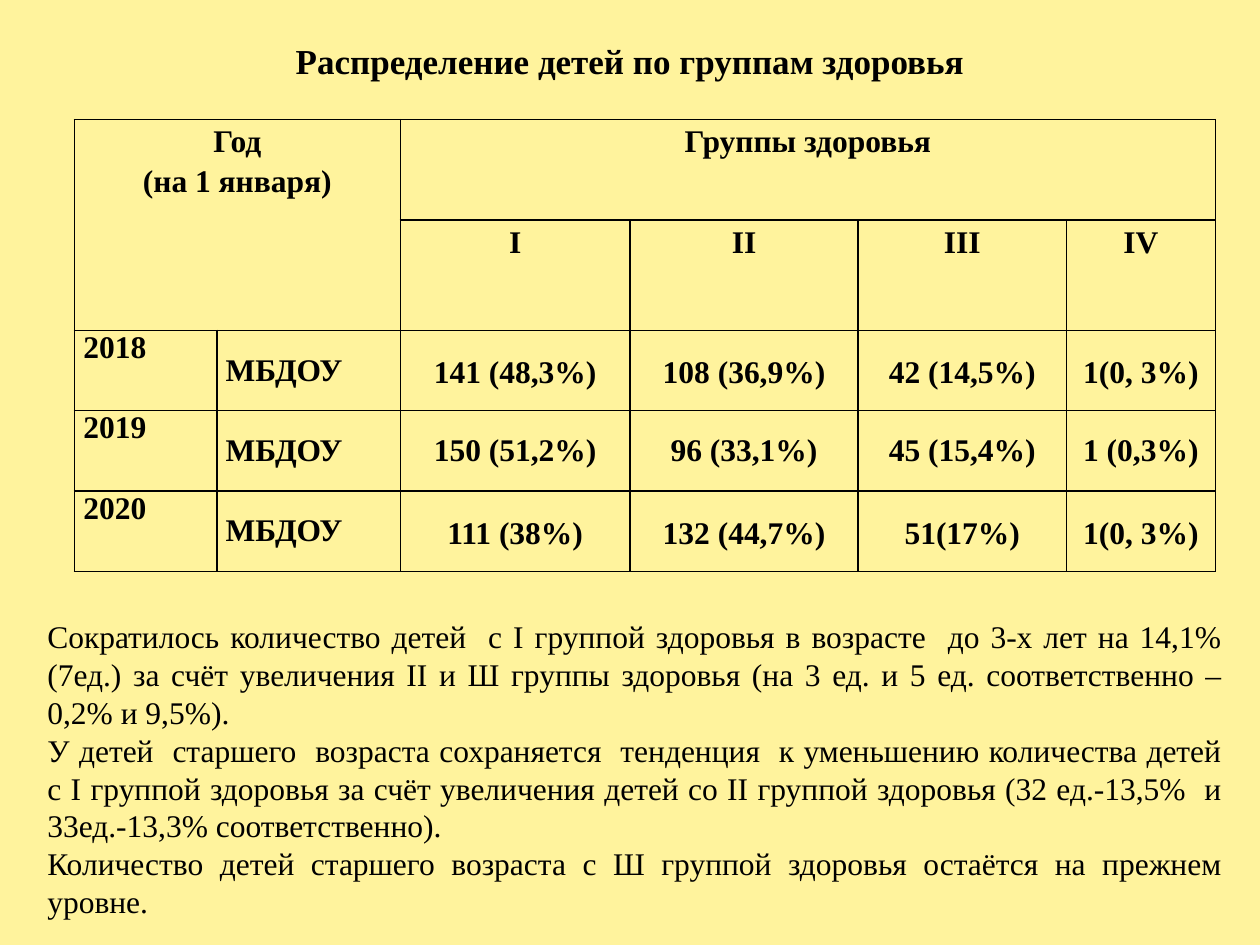
from lxml import etree
from pptx import Presentation
from pptx.dml.color import RGBColor
from pptx.enum.text import MSO_ANCHOR, MSO_AUTO_SIZE, PP_ALIGN
from pptx.oxml.ns import qn
from pptx.util import Cm, Pt

LEFT, CENTER, JUSTIFY = PP_ALIGN.LEFT, PP_ALIGN.CENTER, PP_ALIGN.JUSTIFY
TOP, MIDDLE = MSO_ANCHOR.TOP, MSO_ANCHOR.MIDDLE
NO_AUTOFIT = MSO_AUTO_SIZE.NONE

COLORS = {"background": "FFF39D", "text": "000000", "border": "000000"}
FONT = "Times New Roman"

TITLE = "Распределение детей по группам здоровья"
YEAR_HEADER = ["Год", "(на 1 января)"]
GROUPS_HEADER = ["Группы здоровья"]
GROUPS = ["I", "II", "III", "IV"]
ORGANIZATION = "МБДОУ"
YEARS = [
    ("2018", 1.15, ["141 (48,3%)", "108 (36,9%)", "42 (14,5%)", "1(0, 3%)"]),
    ("2019", 1.0, ["150 (51,2%)", "96 (33,1%)", "45 (15,4%)", "1 (0,3%)"]),
    ("2020", 1.15, ["111 (38%)", "132 (44,7%)", "51(17%)", "1(0, 3%)"]),
]
CONCLUSIONS = [
    "Сократилось количество детей  с I группой здоровья в возрасте  до 3-х лет на 14,1% "
    "(7ед.) за счёт увеличения II и Ш группы здоровья (на 3 ед. и 5 ед. соответственно – "
    "0,2% и 9,5%).",
    "У детей  старшего  возраста сохраняется  тенденция  к уменьшению количества детей "
    "с I группой здоровья за счёт увеличения детей со II группой здоровья (32 ед.-13,5%  и "
    "33ед.-13,3% соответственно).",
    "Количество детей старшего возраста с Ш группой здоровья остаётся на прежнем уровне.",
]

COL_WIDTHS = [2.87, 3.7, 4.63, 4.6, 4.2, 3.0]
ROW_HEIGHTS = [2.02, 2.23, 1.62, 1.62, 1.62]


def write(tf, lines, size=18, bold=False, align=LEFT, spacing=1.0):
    for i, line in enumerate(lines):
        p = tf.paragraphs[0] if i == 0 else tf.add_paragraph()
        p.alignment = align
        p.line_spacing = spacing
        p.space_before = p.space_after = Pt(0)
        r = p.add_run()
        r.text = line
        r.font.name = FONT
        r.font.size = Pt(size)
        r.font.bold = bold
        r.font.color.rgb = RGBColor.from_string(COLORS["text"])


def place(sp, left, top, width, height):
    sp.left, sp.top, sp.width, sp.height = map(Cm, (left, top, width, height))
    tf = sp.text_frame
    tf.word_wrap = True
    tf.auto_size = NO_AUTOFIT
    tf.vertical_anchor = TOP
    return tf


def remove_bullet(p):
    ppr = p._p.get_or_add_pPr()
    ppr.set("marL", "0")
    ppr.set("indent", "0")
    etree.SubElement(ppr, qn("a:buNone"))


def add_borders(cell):
    tcpr = cell._tc.get_or_add_tcPr()
    for i, side in enumerate(("lnL", "lnR", "lnT", "lnB")):
        ln = etree.Element(qn(f"a:{side}"), w=str(Pt(1)))
        fill = etree.SubElement(ln, qn("a:solidFill"))
        etree.SubElement(fill, qn("a:srgbClr"), val=COLORS["border"])
        tcpr.insert(i, ln)


def fill_cell(cell, lines, anchor=TOP, **fmt):
    cell.vertical_anchor = anchor
    write(cell.text_frame, lines, bold=True, **fmt)


def add_health_table(s):
    frame = s.shapes.add_table(len(ROW_HEIGHTS), len(COL_WIDTHS), Cm(1.5), Cm(2.41),
                               Cm(sum(COL_WIDTHS)), Cm(sum(ROW_HEIGHTS)))
    table = frame.table
    for col, width in zip(table.columns, COL_WIDTHS):
        col.width = Cm(width)
    for row, height in zip(table.rows, ROW_HEIGHTS):
        row.height = Cm(height)
    for cell in table.iter_cells():
        cell.fill.background()
        cell.margin_left = cell.margin_right = Cm(0.18)
        cell.margin_top = cell.margin_bottom = 0
        add_borders(cell)

    table.cell(0, 0).merge(table.cell(1, 1))
    table.cell(0, 2).merge(table.cell(0, 5))
    fill_cell(table.cell(0, 0), YEAR_HEADER, align=CENTER, spacing=1.15)
    fill_cell(table.cell(0, 2), GROUPS_HEADER, align=CENTER, spacing=1.15)
    for c, group in enumerate(GROUPS, 2):
        fill_cell(table.cell(1, c), [group], align=CENTER, spacing=1.15)
    for r, (year, spacing, values) in enumerate(YEARS, 2):
        fill_cell(table.cell(r, 0), [year])
        fill_cell(table.cell(r, 1), [ORGANIZATION], anchor=MIDDLE)
        for c, value in enumerate(values, 2):
            fill_cell(table.cell(r, c), [value], anchor=MIDDLE, align=CENTER, spacing=spacing)


def main():
    prs = Presentation()
    prs.slide_width, prs.slide_height = Cm(25.4), Cm(19.05)
    s = prs.slides.add_slide(prs.slide_layouts[1])
    s.background.fill.solid()
    s.background.fill.fore_color.rgb = RGBColor.from_string(COLORS["background"])

    tf = place(s.shapes.title, 0, 0.58, 25.4, 1.88)
    tf.margin_top = Cm(0.22)
    write(tf, [TITLE], size=20, bold=True, align=CENTER)

    add_health_table(s)

    tf = place(s.placeholders[1], 0.7, 12.32, 24.2, 6.1)
    write(tf, CONCLUSIONS, align=JUSTIFY)
    for p in tf.paragraphs:
        remove_bullet(p)

    prs.save("out.pptx")


if __name__ == "__main__":
    main()
